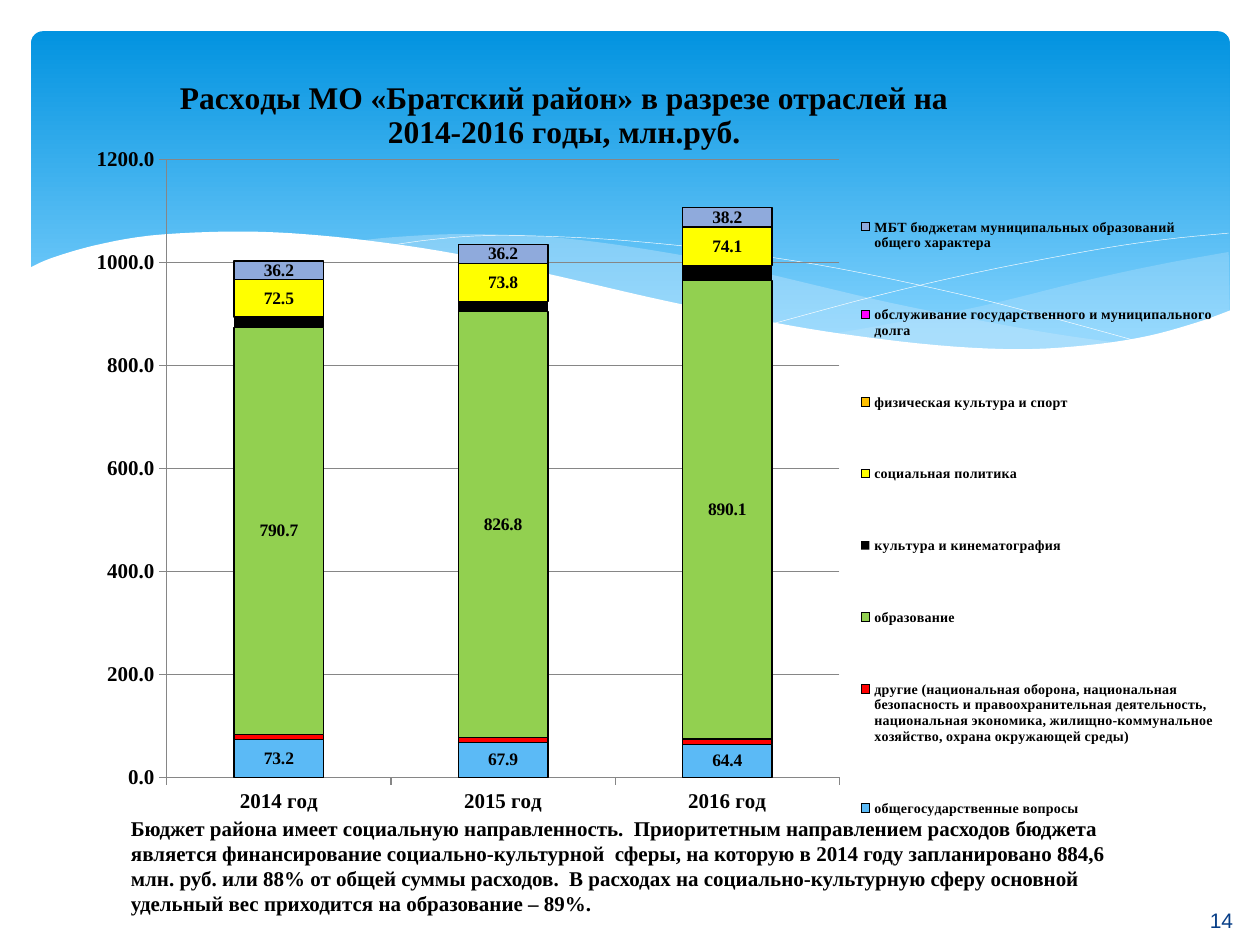
from lxml.etree import SubElement as Sub
from pptx import Presentation
from pptx.chart.data import CategoryChartData as Data
from pptx.dml.color import RGBColor
from pptx.enum.chart import XL_CHART_TYPE as Kind, XL_LEGEND_POSITION as Side
from pptx.enum.chart import XL_TICK_MARK as Tick
from pptx.enum.shapes import MSO_SHAPE as Form
from pptx.enum.text import MSO_ANCHOR as Anchor, PP_ALIGN as Align
from pptx.oxml.ns import qn
from pptx.util import Cm, Pt

SERIF = "Times New Roman"
TITLE = ["Расходы МО «Братский район» в разрезе отраслей на",
         "2014-2016 годы, млн.руб."]
NOTE = ("Бюджет района имеет социальную направленность.  Приоритетным направлением "
        "расходов бюджета является финансирование социально-культурной  сферы, на "
        "которую в 2014 году запланировано 884,6 млн. руб. или 88% от общей суммы "
        "расходов.  В расходах на социально-культурную сферу основной удельный вес "
        "приходится на образование – 89%.")
YEARS = ["2014 год", "2015 год", "2016 год"]

# Name, values, fill, outlined, labelled
ITEMS = [
    ("общегосударственные вопросы", (73.2, 67.9, 64.4), "5BBAF6", True, True),
    ("другие (национальная оборона, национальная безопасность и правоохранительная "
     "деятельность, национальная экономика, жилищно-коммунальное хозяйство, охрана "
     "окружающей среды)", (10, 10, 10), "FF0000", True, False),
    ("образование", (790.7, 826.8, 890.1), "92D050", True, True),
    ("культура и кинематография", (20, 20, 30), "000000", False, False),
    ("социальная политика", (72.5, 73.8, 74.1), "FFFF00", True, True),
    ("физическая культура и спорт", (0, None, None), "FFC000", True, False),
    ("обслуживание государственного и муниципального долга", (0, 0, 0), "FF00FF",
     True, False),
    ("МБТ бюджетам муниципальных образований общего характера", (36.2, 36.2, 38.2),
     "8FAADC", True, True),
]

# Waves in cm: smooth edges, fill, opacity in percent
WAVES = [
    ([[(24.77, 5.08), (23.39, 5.33), (21.87, 5.66), (19.79, 6.17), (17.93, 6.53),
       (16.79, 6.73)],
      [(16.79, 6.73), (17.91, 6.88), (19.23, 7.01), (20.4, 7.06), (21.69, 7.01),
       (22.99, 6.83), (23.93, 6.58), (24.79, 6.27)]], "C6E7FC", 29),
    ([[(22.68, 6.93), (21.26, 6.73), (19.69, 6.45), (17.93, 6.1), (15.98, 5.64),
       (14.45, 5.28), (13.06, 5.03), (11.79, 4.85), (10.67, 4.75), (9.17, 4.72),
       (7.95, 4.78), (7.26, 4.85)],
      [(7.26, 4.85), (8.69, 5.05), (10.26, 5.36), (11.4, 5.64), (13.46, 6.1),
       (15.27, 6.48), (16.89, 6.76), (18.34, 6.96), (19.63, 7.06), (20.78, 7.09),
       (21.77, 7.04), (22.68, 6.93)]], "C6E7FC", 40),
    ([[(7.85, 4.95), (8.71, 4.83), (9.83, 4.75), (11.43, 4.78), (12.95, 4.88),
       (14.78, 5.08), (16.89, 5.41), (19.3, 5.92), (21.11, 6.38), (23.04, 6.91)]],
     None, 0),
    ([[(15.57, 6.53), (17.65, 5.97), (19.71, 5.49), (22, 5.05), (23.47, 4.83),
       (24.77, 4.7)]], None, 0),
    ([[(24.82, 6.25), (24.13, 6.5), (23.11, 6.78), (21.92, 6.96), (20.55, 7.04),
       (18.9, 6.96), (16.97, 6.73), (15.32, 6.45), (13.44, 6.07), (11.35, 5.59),
       (9.27, 5.13), (7.42, 4.85), (5.84, 4.7), (4.5, 4.67), (3.02, 4.75),
       (1.9, 4.95), (1.02, 5.21), (0.58, 5.41)],
      [(0.58, 8.36), (24.82, 8.36)]], "FFFFFF", 100),
]


def tint(code):
    return RGBColor.from_string(code)


def style(font, size, bold=True, name=SERIF, color="000000"):
    font.size, font.bold, font.name = Pt(size), bold, name
    font.color.rgb = tint(color)


def write(text, box, align=Align.LEFT, **look):
    frame = slide.shapes.add_textbox(*map(Cm, box)).text_frame
    frame.word_wrap, frame.vertical_anchor = True, Anchor.MIDDLE
    par = frame.paragraphs[0]
    par.alignment = align
    run = par.add_run()
    run.text = text
    style(run.font, **look)


def smooth(knots, steps=5):
    """Catmull-Rom curve through the knots."""
    ends = [knots[0], *knots, knots[-1]]
    dots = []
    for a, b, c, d in zip(ends, ends[1:], ends[2:], ends[3:]):
        for t in (n / steps for n in range(steps)):
            dots.append(tuple(
                q + t * (r - p + t * (2 * p - 5 * q + 4 * r - s
                                      + t * (3 * (q - r) + s - p))) / 2
                for p, q, r, s in zip(a, b, c, d)))
    return dots + [knots[-1]]


def wave(edges, fill, alpha):
    # The builder keeps whole units only, so points go in as EMU
    dots = [tuple(map(Cm, dot)) for edge in edges for dot in smooth(edge)]
    pen = slide.shapes.build_freeform(*dots[0])
    pen.add_line_segments(dots[1:], close=bool(fill))
    shape = pen.convert_to_shape()
    shape.shadow.inherit = False
    if fill:
        shape.fill.solid()
        shape.fill.fore_color.rgb = tint(fill)
        shape.line.fill.background()
        hue = shape.fill._xPr.find(".//" + qn("a:srgbClr"))
        Sub(hue, qn("a:alpha"), val=str(alpha * 1000))
    else:
        shape.fill.background()
        shape.line.color.rgb = tint("FFFFFF")
        shape.line.width = Pt(0.25)


def place(node, after, inner=False, **spots):
    """Set a manual layout, as shares of the chart area."""
    for old in node.findall(qn("c:layout")):
        node.remove(old)
    lay = node.makeelement(qn("c:layout"), {})
    man = Sub(lay, qn("c:manualLayout"))
    if inner:
        Sub(man, qn("c:layoutTarget"), val="inner")
    for key in "xy":
        Sub(man, qn(f"c:{key}Mode"), val="edge")
    for key, val in spots.items():
        Sub(man, qn("c:" + key), val=str(val))
    if after:
        node.find(qn(after)).addnext(lay)
    else:
        node.insert(0, lay)


deck = Presentation()
deck.slide_width, deck.slide_height = Cm(25.4), Cm(19.05)
slide = deck.slides.add_slide(deck.slide_layouts[6])

# Sky and waves
sky = slide.shapes.add_shape(Form.ROUNDED_RECTANGLE,
                             *map(Cm, (0.63, 0.63, 24.16, 6.86)))
sky.adjustments[0] = 0.034
sky.shadow.inherit = False
sky.line.fill.background()
sky.fill.gradient()
sky.fill.gradient_angle = 270
for stop, spot, code in zip(sky.fill.gradient_stops, (0, 0.9), ("0293E0", "83D3FE")):
    stop.position, stop.color.rgb = spot, tint(code)
for item in WAVES:
    wave(*item)

# Slide number
write("14", (23.01, 18.03, 3.23, 1.02), align=Align.CENTER,
      size=12, bold=False, name="Arial", color="073E87")

# Stacked chart
data = Data(number_format="0.0")
data.categories = YEARS
for name, vals, *_ in ITEMS:
    data.add_series(name, vals)
chart = slide.shapes.add_chart(Kind.COLUMN_STACKED,
                               *map(Cm, (1.19, 0.99, 23.62, 17.65)), data).chart
style(chart.font, 10, bold=False, name="Calibri")
plot = chart.plots[0]
plot.overlap, plot.gap_width = 100, 150
for row, (_, _, fill, lined, shown) in zip(plot.series, ITEMS):
    row.format.fill.solid()
    row.format.fill.fore_color.rgb = tint(fill)
    if lined:
        row.format.line.color.rgb = tint("000000")
        row.format.line.width = Pt(0.75)
    if shown:
        tags = row.data_labels
        tags.show_value = True
        tags.number_format, tags.number_format_is_linked = "0.0", False
        style(tags.font, 10)

# Axes
for axis in (chart.category_axis, chart.value_axis):
    axis.major_tick_mark = Tick.OUTSIDE
    axis.format.line.color.rgb = tint("868686")
    style(axis.tick_labels.font, 12)
scale = chart.value_axis
scale.minimum_scale, scale.maximum_scale, scale.major_unit = 0, 1200, 200
scale.major_gridlines.format.line.color.rgb = tint("868686")
scale.tick_labels.number_format = "0.0"
scale.tick_labels.number_format_is_linked = False

# Chart title and legend
frame = chart.chart_title.text_frame
for num, line in enumerate(TITLE):
    par = frame.add_paragraph() if num else frame.paragraphs[0]
    par.alignment = Align.CENTER
    run = par.add_run()
    run.text = line
    style(run.font, 18)
chart.chart_title.include_in_layout = False
chart.has_legend = True
key = chart.legend
key.position, key.include_in_layout = Side.RIGHT, False
style(key.font, 8)
place(chart.chart_title._element, "c:tx", x=0.1, y=0.03)
place(key._element, "c:legendPos", x=0.68, y=0.13, w=0.31, h=0.81)
place(plot._element.getparent(), None, inner=True, x=0.092, y=0.126, w=0.574, h=0.706)

# Summary
write(NOTE, (2.39, 16.46, 20.47, 1.98), size=12)

deck.save("out.pptx")
